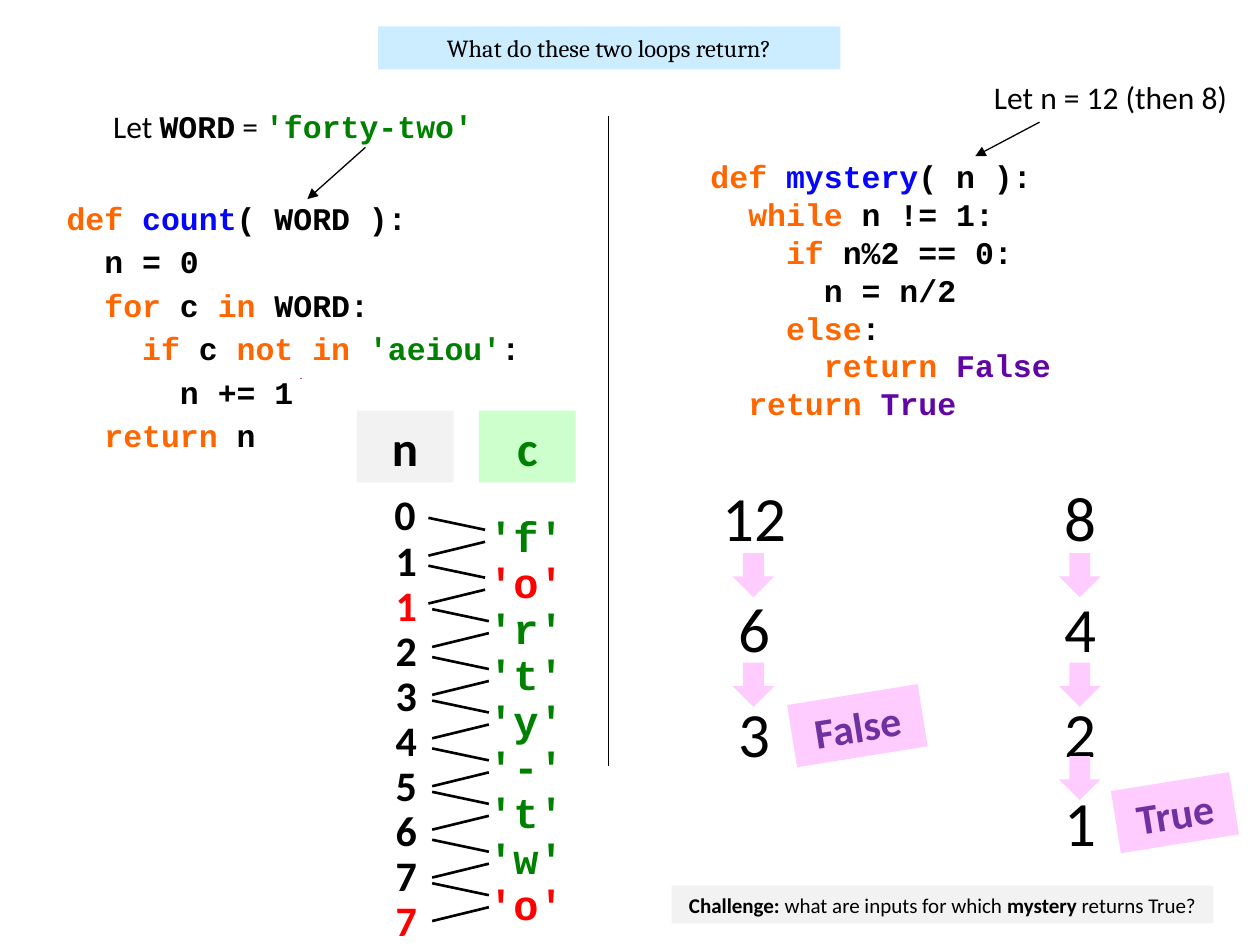
"""Build a slide that traces two Python loops, one per half of the page."""
import pptx
import pptx.dml.color
import pptx.enum.shapes
import pptx.enum.text
import pptx.oxml.ns
import pptx.util
from lxml import etree

RGB = pptx.dml.color.RGBColor
BLACK = RGB(0x00, 0x00, 0x00)
ORANGE = RGB(0xFF, 0x66, 0x00)
BLUE = RGB(0x05, 0x04, 0xFD)
GREEN = RGB(0x00, 0x80, 0x00)
RED = RGB(0xFF, 0x00, 0x00)
VIOLET = RGB(0x61, 0x05, 0xA5)
PURPLE = RGB(0x70, 0x30, 0xA0)
PINK = RGB(0xFF, 0xCC, 0xFF)
SKY = RGB(0xCC, 0xEC, 0xFF)
MINT = RGB(0xCC, 0xFF, 0xCC)
GREY = RGB(0xF2, 0xF2, 0xF2)
BRICK = RGB(0xC0, 0x50, 0x4D)
SANS, SERIF, MONO = "Calibri", "Cambria", "Courier New"
PRESET = pptx.enum.shapes.MSO_SHAPE
ALIGN = pptx.enum.text.PP_ALIGN
ANCHOR = pptx.enum.text.MSO_ANCHOR

deck = pptx.Presentation()
deck.slide_width = pptx.util.Inches(10)
deck.slide_height = pptx.util.Inches(7.5)
page = deck.slides.add_slide(deck.slide_layouts[5])
COL = deck.slide_width // 100
ROW = deck.slide_height // 75


def label(area, lines, size, font=SANS, bold=False, fill=None, box=None,
          align=ALIGN.CENTER, leading=None, gap=0, turn=0):
    """Put lines of (text, colour, bold, font) spans in a box on the grid."""
    left, top, width, height = area
    bounds = [int(n) for n in (left * COL, top * ROW, width * COL, height * ROW)]
    if box is None and fill is None:
        box = page.shapes.add_textbox(*bounds)
    elif box is None:
        box = page.shapes.add_shape(PRESET.RECTANGLE, *bounds)
        box.shadow.inherit = False
    box.left, box.top, box.width, box.height = bounds
    box.rotation = turn
    frame = box.text_frame
    frame.word_wrap = True
    frame.auto_size = pptx.enum.text.MSO_AUTO_SIZE.NONE
    frame.vertical_anchor = ANCHOR.TOP
    if fill is not None:
        box.fill.solid()
        box.fill.fore_color.rgb = fill
        box.line.fill.background()
        frame.vertical_anchor = ANCHOR.MIDDLE
    for number, line in enumerate(lines):
        para = frame.add_paragraph() if number else frame.paragraphs[0]
        para.alignment = align
        if leading:
            para.line_spacing = leading
        if number and gap:
            para.space_before = pptx.util.Pt(gap)
        for text, colour, *style in line:
            span = para.add_run()
            span.text = text
            span.font.size = pptx.util.Pt(size)
            span.font.color.rgb = colour
            span.font.bold = style[0] if style else bold
            span.font.name = style[1] if len(style) > 1 else font


def connect(x1, y1, x2, y2, weight=0.75, arrow=False):
    """Draw a black line between two grid points."""
    link = page.shapes.add_connector(
        pptx.enum.shapes.MSO_CONNECTOR.STRAIGHT,
        int(x1 * COL), int(y1 * ROW), int(x2 * COL), int(y2 * ROW))
    link.line.color.rgb = BLACK
    link.line.width = pptx.util.Pt(weight)
    if arrow:
        tail = etree.SubElement(link.line._get_or_add_ln(), pptx.oxml.ns.qn("a:tailEnd"))
        tail.set("type", "triangle")
    etree.SubElement(link._element.spPr, pptx.oxml.ns.qn("a:effectLst"))


label((30, 2.1, 36.7, 3.4), [[("What do these two loops return?", BLACK)]], 14,
      font=SERIF, fill=SKY, box=page.shapes.title)
connect(48.3, 9.2, 48.3, 60.8)

count_code = [
    [("def ", ORANGE), ("count", BLUE), ("( WORD ):", BLACK)],
    [("  n = 0", BLACK)],
    [("  for", ORANGE), (" c ", BLACK), ("in", ORANGE), (" WORD:", BLACK)],
    [("    if", ORANGE), (" c ", BLACK), ("not in ", ORANGE), ("'aeiou'", GREEN), (":", BLACK)],
    [("      n += 1", BLACK)],
    [("  return", ORANGE), (" n", BLACK)],
]
mystery_code = [
    [("def ", ORANGE), ("mystery", BLUE), ("( n ):", BLACK)],
    [("  while", ORANGE), (" n != 1:", BLACK)],
    [("    if", ORANGE), (" n%2 == 0:", BLACK)],
    [("      n = n/2", BLACK)],
    [("    else", ORANGE), (":", BLACK)],
    [("      return ", ORANGE), ("False", VIOLET)],
    [("  return ", ORANGE), ("True", VIOLET)],
]
label((4.3, 16.1, 39.2, 21.5), count_code, 18, MONO, True,
      align=ALIGN.LEFT, leading=0.7, gap=9.75)
label((55.4, 12, 33.1, 22), mystery_code, 18, MONO, True, align=ALIGN.LEFT)

word_line = [("Let ", BLACK), ("WORD", BLACK, True, MONO), (" = ", BLACK),
             ("'forty-two'", GREEN, True, MONO)]
label((8, 8, 35.4, 4), [word_line], 18, align=ALIGN.LEFT)
label((77.1, 5.7, 22.1, 4), [[("Let n = 12 (then 8)", BLACK)]], 18)
connect(29, 11.7, 24.4, 15.8, arrow=True)
connect(82.5, 9.7, 77.4, 12.4, arrow=True)

pen = page.shapes.build_freeform(int(23.9 * COL), 30 * ROW)
pen.add_line_segments([(int(23.9 * COL), int(30.1 * ROW))], close=False)
dot = pen.convert_to_shape()
dot.shadow.inherit = False
dot.fill.background()
dot.line.color.rgb = BRICK
dot.line.width = pptx.util.Pt(1.5)

for left, name, colour, fill in ((28.3, "n", BLACK, GREY), (38, "c", GREEN, MINT)):
    label((left, 32.6, 7.7, 5.7), [[(name, colour)]], 28, bold=True, fill=fill)

total = 0
label((28.3, 38.3, 7.7, 5), [[("0", BLACK)]], 24, bold=True)
for step, letter in enumerate("forty-two"):
    vowel = letter in "aeiou"
    total += not vowel
    label((37, 40 + 3.65 * step, 9.5, 5), [[(f"'{letter}'", RED if vowel else GREEN)]],
          24, MONO, True)
    label((28.4, 41.9 + 3.58 * step, 7.7, 5), [[(str(total), RED if vowel else BLACK)]],
          24, bold=True)
    x = 34 if step < 2 else 34.3
    y = 41.1 + 7.25 * (step // 2) + 3.8 * (step % 2)
    connect(x, y, x + 4.5, y + 0.95, 1.5)
    connect(x, y + 3, x + 4.5, y + 1.9, 1.5)

value_rows = (37.5, 46.3, 54.6, 61.7)
arrow_rows = (43.9, 52.6, 60)
for left, values in ((56, (12, 6, 3)), (81.9, (8, 4, 2, 1))):
    for top, value in zip(value_rows, values):
        label((left, top, 7.7, 7.1), [[(str(value), BLACK)]], 36)
    for top in arrow_rows[:len(values) - 1]:
        arrow = page.shapes.add_shape(
            PRESET.DOWN_ARROW, int((left + 2.15) * COL), int(top * ROW),
            int(3.3 * COL), int(3.5 * ROW))
        arrow.shadow.inherit = False
        arrow.fill.solid()
        arrow.fill.fore_color.rgb = PINK
        arrow.line.fill.background()

for area, result in (((62.8, 55.1, 10.5, 5), "False"), ((88.5, 62, 9.5, 5), "True")):
    label(area, [[(result, PURPLE)]], 24, bold=True, fill=PINK, turn=-9.1)

challenge = [("Challenge: ", BLACK, True), ("what are inputs for which ", BLACK),
             ("mystery", BLACK, True), (" returns True?", BLACK)]
label((53.3, 70.3, 43, 3), [challenge], 12, fill=GREY)

deck.save("out.pptx")
